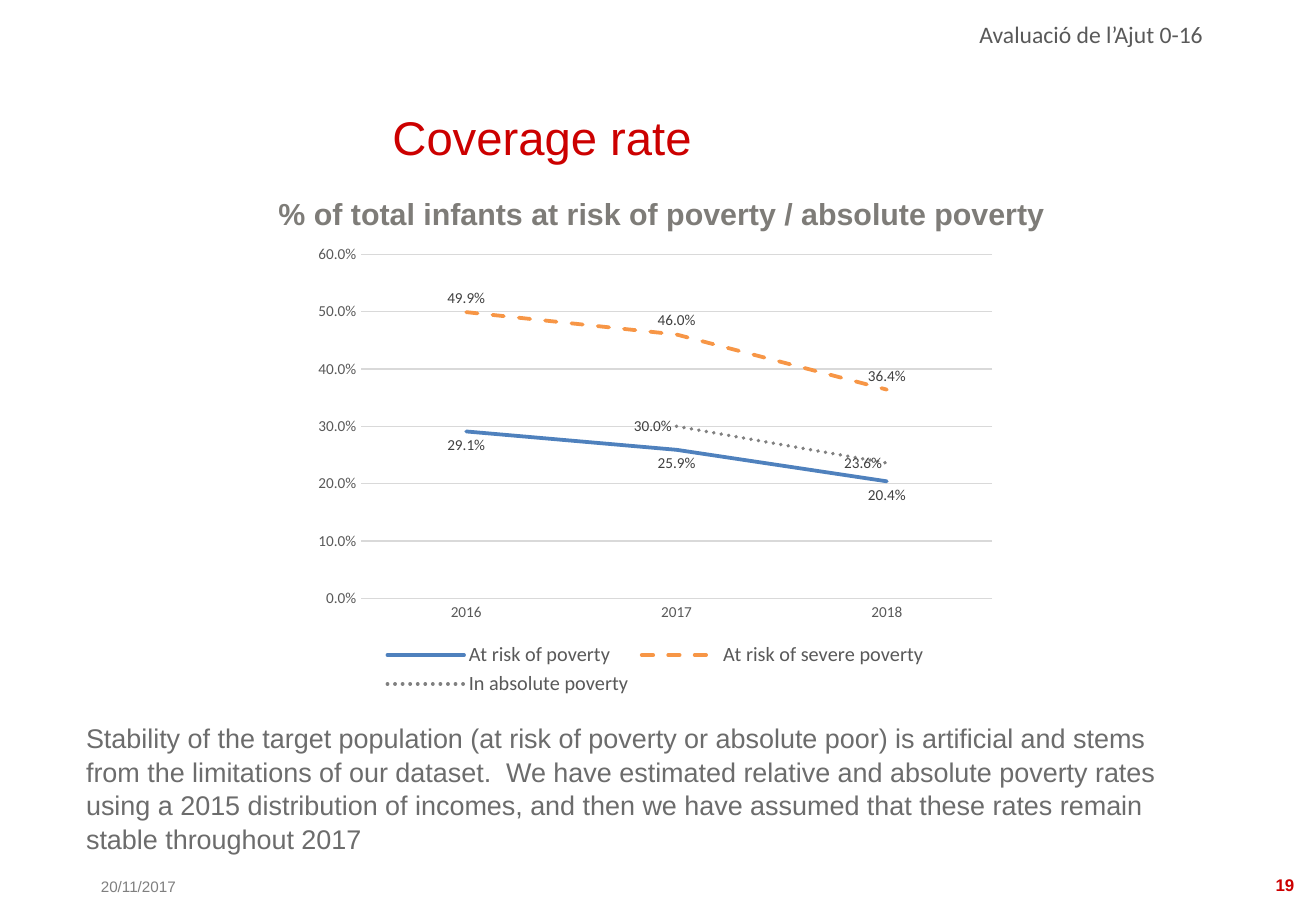
"""Build the coverage rate slide with its line chart."""
from dataclasses import dataclass

from pptx import Presentation
from pptx.chart.data import CategoryChartData as Data
from pptx.dml.color import RGBColor as RGB
from pptx.enum.chart import XL_CHART_TYPE as Kind
from pptx.enum.chart import XL_LABEL_POSITION as Spot
from pptx.enum.chart import XL_LEGEND_POSITION as Side
from pptx.enum.chart import XL_TICK_MARK as Tick
from pptx.enum.dml import MSO_LINE as Dash
from pptx.enum.shapes import MSO_SHAPE as Form
from pptx.enum.text import MSO_ANCHOR as Anchor
from pptx.enum.text import PP_ALIGN as Align
from pptx.oxml import parse_xml
from pptx.oxml.ns import nsdecls
from pptx.util import Pt

SCALE = 9144


@dataclass(frozen=True)
class Theme:
    sans: str = "Arial"
    plain: str = "Calibri"
    white: str = "FFFFFF"
    red: str = "CC0000"
    mute: str = "7F7F7F"
    warm: str = "7E7C78"
    body: str = "6C6C6C"
    dark: str = "595959"
    label: str = "404040"
    grid: str = "D9D9D9"
    blue: str = "4F81BD"
    orange: str = "F79646"
    gray: str = "808080"
    title: int = 28
    head: int = 18
    text: int = 16
    top: int = 14
    key: int = 12
    base: int = 10
    small: int = 9


T = Theme()


def px(*nums):
    return [num * SCALE for num in nums]


def style(font, size, tint, face=T.plain, bold=False):
    font.size, font.name, font.bold = Pt(size), face, bold
    font.color.rgb = RGB.from_string(tint)


def write(shape, text, size, tint, face=T.sans, bold=False, align=Align.LEFT,
          anchor=Anchor.TOP, pad=(10, 5, 10, 5), lead=None):
    frame = shape.text_frame
    frame.word_wrap, frame.vertical_anchor = True, anchor
    (frame.margin_left, frame.margin_top,
     frame.margin_right, frame.margin_bottom) = px(*pad)
    para = frame.paragraphs[0]
    para.alignment = align
    if lead:
        para.line_spacing = lead
    run = para.add_run()
    run.text = text
    style(run.font, size, tint, face, bold)


def add_text(slide, area, text, size, tint, **form):
    write(slide.shapes.add_textbox(*px(*area)), text, size, tint, **form)


def add_title(slide, area, text):
    box = slide.shapes.add_shape(Form.RECTANGLE, *px(*area))
    box.shadow.inherit = False
    box.fill.solid()
    box.fill.fore_color.rgb = RGB.from_string(T.white)
    draw(box.line, T.white, 0.75)
    write(box, text, T.title, T.red, anchor=Anchor.MIDDLE, pad=(0, 5, 10, 5))


def draw(line, tint, width, dash=None):
    line.color.rgb = RGB.from_string(tint)
    line.width = Pt(width)
    if dash:
        line.dash_style = dash


def place_plot(chart, **parts):
    items = "".join(f'<c:{name} val="{val}"/>' for name, val in parts.items())
    plot = chart.element.chart.plotArea
    for old in plot.xpath("c:layout"):
        plot.remove(old)
    plot.insert(0, parse_xml(
        f'<c:layout {nsdecls("c")}><c:manualLayout><c:layoutTarget val="inner"/>'
        f'<c:xMode val="edge"/><c:yMode val="edge"/>{items}'
        '</c:manualLayout></c:layout>'))


def set_axes(chart):
    years, rates = chart.category_axis, chart.value_axis
    for axis in (years, rates):
        axis.major_tick_mark = axis.minor_tick_mark = Tick.NONE
        style(axis.tick_labels.font, T.small, T.dark)
    years.has_major_gridlines = False
    draw(years.format.line, T.grid, 0.75)
    rates.minimum_scale, rates.maximum_scale, rates.major_unit = 0, 0.6, 0.1
    rates.format.line.fill.background()
    rates.has_major_gridlines = True
    draw(rates.major_gridlines.format.line, T.grid, 0.75)
    rates.tick_labels.number_format = "0.0%"
    rates.tick_labels.number_format_is_linked = False


def add_graph(slide, area, years, rows):
    data = Data(number_format="0.0%")
    data.categories = years
    for name, vals, *_ in rows:
        data.add_series(name, vals)
    chart = slide.shapes.add_chart(Kind.LINE, *px(*area), data).chart
    chart.has_title = False
    style(chart.font, T.base, "000000")
    chart.has_legend = True
    chart.legend.position = Side.BOTTOM
    chart.legend.include_in_layout = False
    style(chart.legend.font, T.key, T.dark)
    set_axes(chart)
    place_plot(chart, x=0.08, y=0.04, w=0.9, h=0.74)
    chart.plots[0].vary_by_categories = False
    for line, (_, _, tint, dash, spot) in zip(chart.plots[0].series, rows):
        line.smooth = False
        draw(line.format.line, tint, 2.25, dash)
        tags = line.data_labels
        tags.show_value, tags.position = True, spot
        tags.number_format, tags.number_format_is_linked = "0.0%", False
        style(tags.font, T.small, T.label)
    for edge in chart.element.xpath(".//c:ser/c:spPr/a:ln"):
        edge.set("cap", "rnd")


def main():
    deck = Presentation()
    deck.slide_width, deck.slide_height = px(1083, 750)
    slide = deck.slides.add_slide(deck.slide_layouts[6])
    foot = dict(anchor=Anchor.BOTTOM, pad=(0, 5, 10, 5))
    add_text(slide, (83, 718, 92, 24), "20/11/2017", T.small, T.mute, **foot)
    add_text(slide, (1025, 717, 50, 25), "19", T.base, T.red, bold=True,
             align=Align.RIGHT, **foot)
    add_text(slide, (317, 25, 683, 21), "Avaluació de l’Ajut 0-16", T.top,
             T.dark, face=T.plain, align=Align.RIGHT, lead=0.3)
    add_text(slide, (67, 157, 955, 107),
             "% of total infants at risk of poverty / absolute poverty",
             T.head, T.warm, bold=True, align=Align.CENTER, pad=(4, 4, 4, 4))
    add_text(slide, (61, 588, 939, 118),
             "Stability of the target population (at risk of poverty or absolute "
             "poor) is artificial and stems from the limitations of our dataset.  "
             "We have estimated relative and absolute poverty rates using a 2015 "
             "distribution of incomes, and then we have assumed that these rates "
             "remain stable throughout 2017", T.text, T.body, lead=1.04)
    add_title(slide, (323, 81, 506, 63), "Coverage rate")
    add_graph(slide, (251, 194, 577, 383), ("2016", "2017", "2018"), (
        ("At risk of poverty", (0.291, 0.259, 0.204),
         T.blue, Dash.SOLID, Spot.BELOW),
        ("At risk of severe poverty", (0.499, 0.46, 0.364),
         T.orange, Dash.DASH, Spot.ABOVE),
        ("In absolute poverty", (None, 0.3, 0.236),
         T.gray, Dash.ROUND_DOT, Spot.LEFT)))
    deck.save("out.pptx")


if __name__ == "__main__":
    main()
